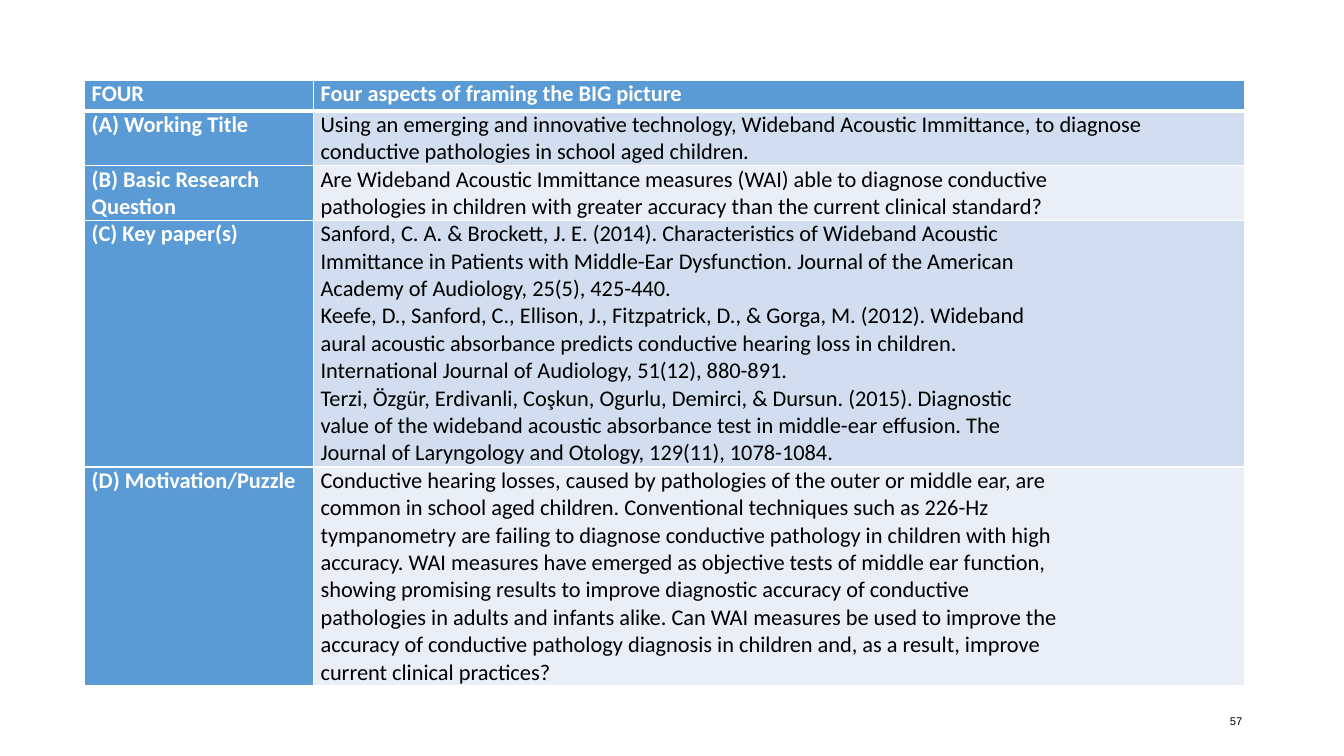
from pptx import Presentation
from pptx.dml.color import RGBColor
from pptx.enum.text import MSO_ANCHOR, PP_ALIGN
from pptx.oxml import parse_xml
from pptx.oxml.ns import nsdecls
from pptx.util import Inches, Pt

THEME = {
    "head": "5B9BD5", "bands": ["D2DEEF", "EAEFF7"],
    "white": "FFFFFF", "black": "000000",
    "body_font": "Calibri", "body_size": 16,
    "number_font": "Arial", "number_size": 8,
}
COLUMNS = [2.27, 9.23]
# Row height, label, lines of the answer
ROWS = [
    (0.3, "FOUR", ["Four aspects of framing the BIG picture"]),
    (0.42, "(A) Working Title", [
        "Using an emerging and innovative technology, Wideband Acoustic Immittance, to diagnose",
        "conductive pathologies in school aged children.",
    ]),
    (0.42, "(B) Basic Research Question", [
        "Are Wideband Acoustic Immittance measures (WAI) able to diagnose conductive",
        "pathologies in children with greater accuracy than the current clinical standard?",
    ]),
    (1.92, "(C) Key paper(s)", [
        "Sanford, C. A. & Brockett, J. E. (2014). Characteristics of Wideband Acoustic",
        "Immittance in Patients with Middle-Ear Dysfunction. Journal of the American",
        "Academy of Audiology, 25(5), 425-440.",
        "Keefe, D., Sanford, C., Ellison, J., Fitzpatrick, D., & Gorga, M. (2012). Wideband",
        "aural acoustic absorbance predicts conductive hearing loss in children.",
        "International Journal of Audiology, 51(12), 880-891.",
        "Terzi, Özgür, Erdivanli, Coşkun, Ogurlu, Demirci, & Dursun. (2015). Diagnostic",
        "value of the wideband acoustic absorbance test in middle-ear effusion. The",
        "Journal of Laryngology and Otology, 129(11), 1078-1084.",
    ]),
    (1.98, "(D) Motivation/Puzzle", [
        "Conductive hearing losses, caused by pathologies of the outer or middle ear, are",
        "common in school aged children. Conventional techniques such as 226-Hz",
        "tympanometry are failing to diagnose conductive pathology in children with high",
        "accuracy. WAI measures have emerged as objective tests of middle ear function,",
        "showing promising results to improve diagnostic accuracy of conductive",
        "pathologies in adults and infants alike. Can WAI measures be used to improve the",
        "accuracy of conductive pathology diagnosis in children and, as a result, improve",
        "current clinical practices?",
    ]),
]


def write_lines(tf, lines, kind, color, bold=False, align=PP_ALIGN.LEFT):
    for i, line in enumerate(lines):
        p = tf.paragraphs[0] if i == 0 else tf.add_paragraph()
        p.alignment = align
        r = p.add_run()
        r.text = line
        font = {"name": THEME[kind + "_font"], "size": Pt(THEME[kind + "_size"]), "bold": bold}
        for name, value in font.items():
            setattr(r.font, name, value)
        r.font.color.rgb = RGBColor.from_string(THEME[color])


def add_borders(cell, widths):
    tc_pr = cell._tc.get_or_add_tcPr()
    for i, (side, width) in enumerate(widths.items()):
        tc_pr.insert(i, parse_xml(
            f'<a:ln{side} {nsdecls("a")} w="{Pt(width)}"><a:solidFill>'
            f'<a:srgbClr val="{THEME["white"]}"/></a:solidFill></a:ln{side}>'))


prs = Presentation()
prs.slide_width, prs.slide_height = Inches(13.33), Inches(7.5)
s = prs.slides.add_slide(prs.slide_layouts[6])

# Framing table
table = s.shapes.add_table(len(ROWS), len(COLUMNS), Inches(0.84), Inches(0.8),
                           Inches(sum(COLUMNS)), Inches(sum(row[0] for row in ROWS))).table
for column, width in zip(table.columns, COLUMNS):
    column.width = Inches(width)

margins = {"margin_left": Inches(0.07), "margin_right": Inches(0.07),
           "margin_top": 0, "margin_bottom": 0}
for i, (height, label, answer) in enumerate(ROWS):
    table.rows[i].height = Inches(height)
    for j, lines in enumerate([[label], answer]):
        cell = table.cell(i, j)
        for name, value in margins.items():
            setattr(cell, name, value)
        heading = i == 0 or j == 0
        fill = THEME["head"] if heading else THEME["bands"][(i - 1) % 2]
        cell.fill.solid()
        cell.fill.fore_color.rgb = RGBColor.from_string(fill)
        write_lines(cell.text_frame, lines, "body", "white" if heading else "black", heading)
        # The header row is set off by a thicker rule
        add_borders(cell, {"L": 1, "R": 1, "T": 3 if i == 1 else 1, "B": 3 if i == 0 else 1})

# Slide number
tf = s.shapes.add_textbox(Inches(9.42), Inches(6.95), Inches(3), Inches(0.4)).text_frame
tf.word_wrap = True
tf.vertical_anchor = MSO_ANCHOR.MIDDLE
write_lines(tf, ["57"], "number", "black", align=PP_ALIGN.RIGHT)

prs.save("out.pptx")
